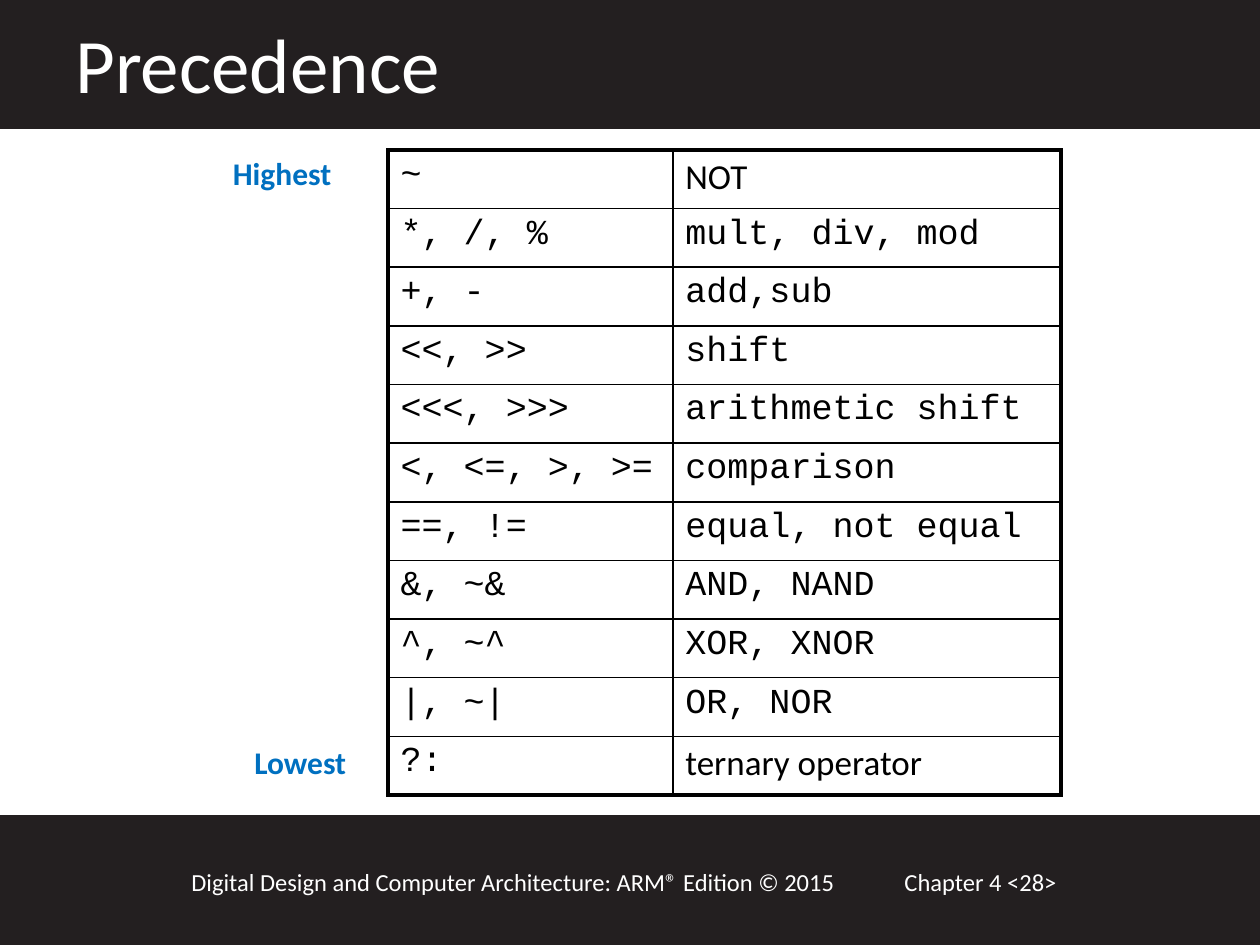
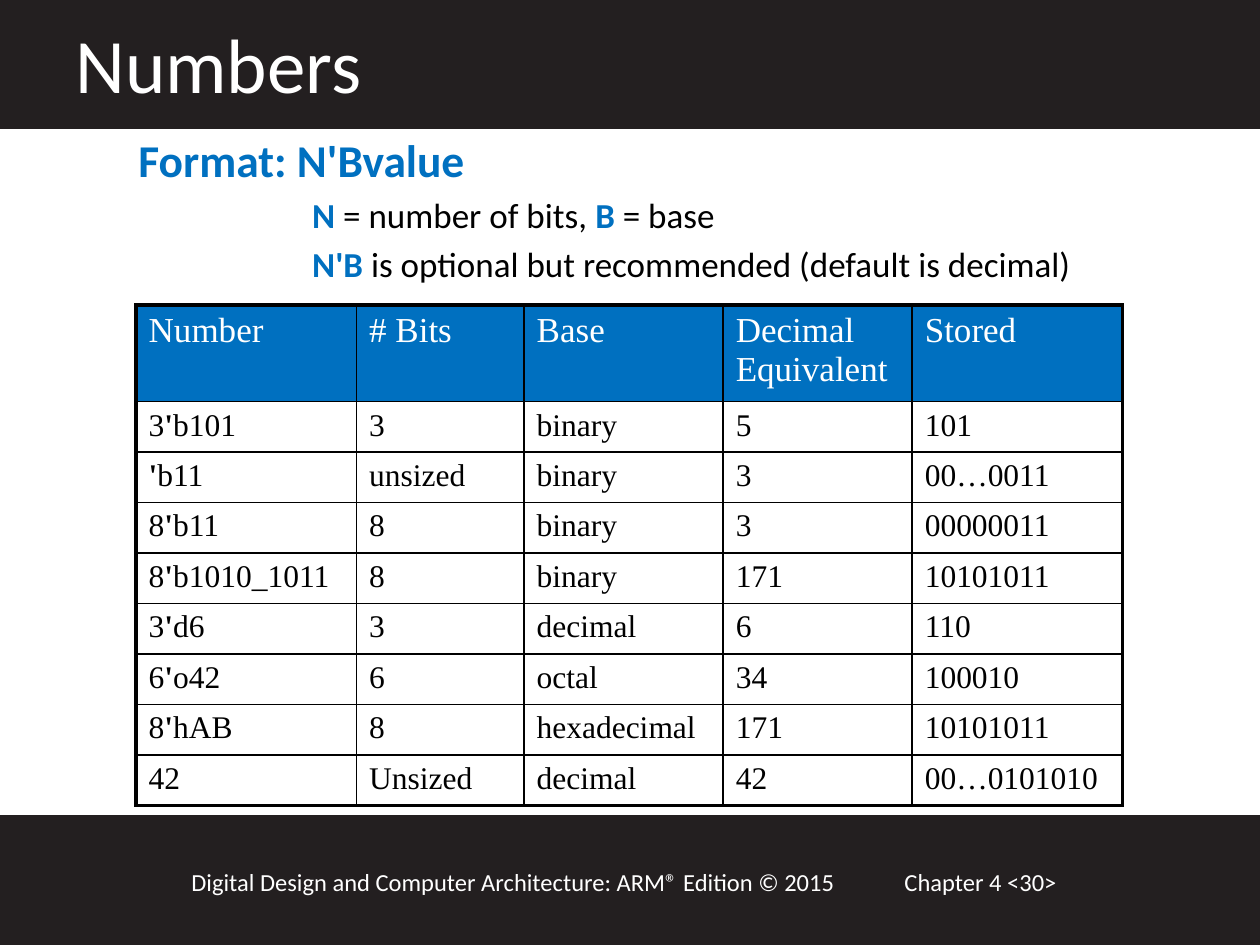
from pptx import Presentation
from pptx import util as u
from pptx.dml import color
from pptx.enum import shapes
from pptx.oxml import ns
from lxml import etree

COLORS = {"band": "231F20", "accent": "0070C0", "white": "FFFFFF", "black": "000000"}

TITLE = {"name": "Calibri", "size": u.Pt(44), "color": "white"}
FOOTER = {"name": "Calibri", "size": u.Pt(14), "color": "white"}
RANK = {"name": "Calibri", "size": u.Pt(18), "color": "accent", "bold": True}
HEADING = {"name": "Calibri", "size": u.Pt(26), "color": "accent", "bold": True}
NOTE = {"name": "Calibri", "size": u.Pt(20), "color": "black"}
SYMBOL = {**NOTE, "color": "accent", "bold": True}
CODE = {"name": "Courier New", "size": u.Pt(20), "color": "black"}
COLUMN_HEAD = {"name": "Times New Roman", "size": u.Pt(20), "color": "white"}
VALUE = {"name": "Times New Roman", "size": u.Pt(18), "color": "black"}
TICK = {**VALUE, "bold": True}

BANDS = [(0, 1.01), (6.48, 1.02)]
BOOK = "Digital Design and Computer Architecture: ARM® Edition © 2015"
OUTER, INNER = 2.25, 1

PRECEDENCE = [
    ("~", "NOT"),
    ("*, /, %", "mult, div, mod"),
    ("+, -", "add,sub"),
    ("<<, >>", "shift"),
    ("<<<, >>>", "arithmetic shift"),
    ("<, <=, >, >=", "comparison"),
    ("==, !=", "equal, not equal"),
    ("&, ~&", "AND, NAND"),
    ("^, ~^", "XOR, XNOR"),
    ("|, ~|", "OR, NOR"),
    ("?:", "ternary operator"),
]
PROSE = {"NOT", "ternary operator"}
RANKS = [("Highest", 1.75, 1.17), ("Lowest", 1.92, 5.85)]

NUMBERS = [
    ("Number", "# Bits", "Base", "Decimal Equivalent", "Stored"),
    ("3'b101", "3", "binary", "5", "101"),
    ("'b11", "unsized", "binary", "3", "00…0011"),
    ("8'b11", "8", "binary", "3", "00000011"),
    ("8'b1010_1011", "8", "binary", "171", "10101011"),
    ("3'd6", "3", "decimal", "6", "110"),
    ("6'o42", "6", "octal", "34", "100010"),
    ("8'hAB", "8", "hexadecimal", "171", "10101011"),
    ("42", "Unsized", "decimal", "42", "00…0101010"),
]
FORMAT_NOTES = [
    [("Format: N'Bvalue", HEADING)],
    [("N", SYMBOL), (" = number of bits, ", NOTE), ("B", SYMBOL), (" = base", NOTE)],
    [("N'B", SYMBOL), (" is optional but recommended (default is decimal)", NOTE)],
]


def rgb(name):
    return color.RGBColor.from_string(COLORS[name])


def add_spans(para, spans):
    for words, style in spans:
        span = para.add_run()
        span.text = words
        for key, value in style.items():
            if key == "color":
                span.font.color.rgb = rgb(value)
            else:
                setattr(span.font, key, value)


def add_text(page, place, lines):
    box = page.shapes.add_textbox(*map(u.Inches, place))
    frame = box.text_frame
    frame.word_wrap = True
    for index, spans in enumerate(lines):
        para = frame.add_paragraph() if index else frame.paragraphs[0]
        if index:
            para.space_before = u.Pt(4)
            para._p.get_or_add_pPr().set("marL", str(u.Inches(1.38)))
        add_spans(para, spans)


def add_page(deck, title, number):
    page = deck.slides.add_slide(deck.slide_layouts[6])
    for top, height in BANDS:
        band = page.shapes.add_shape(
            shapes.MSO_SHAPE.RECTANGLE, 0, u.Inches(top), deck.slide_width, u.Inches(height))
        band.shadow.inherit = False
        band.fill.solid()
        band.fill.fore_color.rgb = rgb("band")
        band.line.color.rgb = rgb("band")
        band.line.width = u.Pt(2)
    add_text(page, (7.08, 6.83, 2.17, 0.34), [[(f"Chapter 4 <{number}>", FOOTER)]])
    add_text(page, (1.42, 6.83, 5.75, 0.34), [[(BOOK, FOOTER)]])
    add_text(page, (0.5, 0.08, 8.67, 0.84), [[(title, TITLE)]])
    return page


def set_borders(cell, edges):
    properties = cell._tc.get_or_add_tcPr()
    for side, is_outer in edges.items():
        width = u.Pt(OUTER if is_outer else INNER)
        line = etree.SubElement(properties, ns.qn(f"a:ln{side}"), w=str(width))
        fill = etree.SubElement(line, ns.qn("a:solidFill"))
        etree.SubElement(fill, ns.qn("a:srgbClr"), val=COLORS["black"])


def add_grid(page, left, top, widths, heights, rows, spans_for, head_fill=None):
    table = page.shapes.add_table(
        len(rows), len(widths), u.Inches(left), u.Inches(top),
        u.Inches(sum(widths)), u.Inches(sum(heights))).table
    table.first_row = table.horz_banding = False
    for column, width in zip(table.columns, widths):
        column.width = u.Inches(width)
    for r, (row, height) in enumerate(zip(rows, heights)):
        table.rows[r].height = u.Inches(height)
        for c, words in enumerate(row):
            cell = table.cell(r, c)
            set_borders(cell, {"L": c == 0, "R": c == len(widths) - 1,
                               "T": r == 0, "B": r == len(rows) - 1})
            if head_fill and r == 0:
                cell.fill.solid()
                cell.fill.fore_color.rgb = rgb(head_fill)
            else:
                cell.fill.background()
            add_spans(cell.text_frame.paragraphs[0], spans_for(r, words))


def precedence_spans(row, words):
    return [(words, NOTE if words in PROSE else CODE)]


def number_spans(row, words):
    if row == 0:
        return [(words, COLUMN_HEAD)]
    size, tick, digits = words.partition("'")
    return [(part, style) for part, style in
            ((size, VALUE), (tick, TICK), (digits, VALUE)) if part]


def main():
    deck = Presentation()
    deck.slide_width, deck.slide_height = u.Inches(10), u.Inches(7.5)

    page = add_page(deck, "Precedence", 28)
    row_height = 5.12 / len(PRECEDENCE)
    add_grid(page, 3.08, 1.19, [2.26, 3.08], [row_height] * len(PRECEDENCE),
             PRECEDENCE, precedence_spans)
    for label, left, top in RANKS:
        add_text(page, (left, top, 1.92, 0.4), [[(label, RANK)]])

    page = add_page(deck, "Numbers", 30)
    add_grid(page, 1.08, 2.42, [1.75, 1.33, 1.58, 1.5, 1.67],
             [0.76] + [0.4] * (len(NUMBERS) - 1), NUMBERS, number_spans, "accent")
    add_text(page, (1, 1, 8.5, 5.42), FORMAT_NOTES)

    deck.save("out.pptx")


if __name__ == "__main__":
    main()
